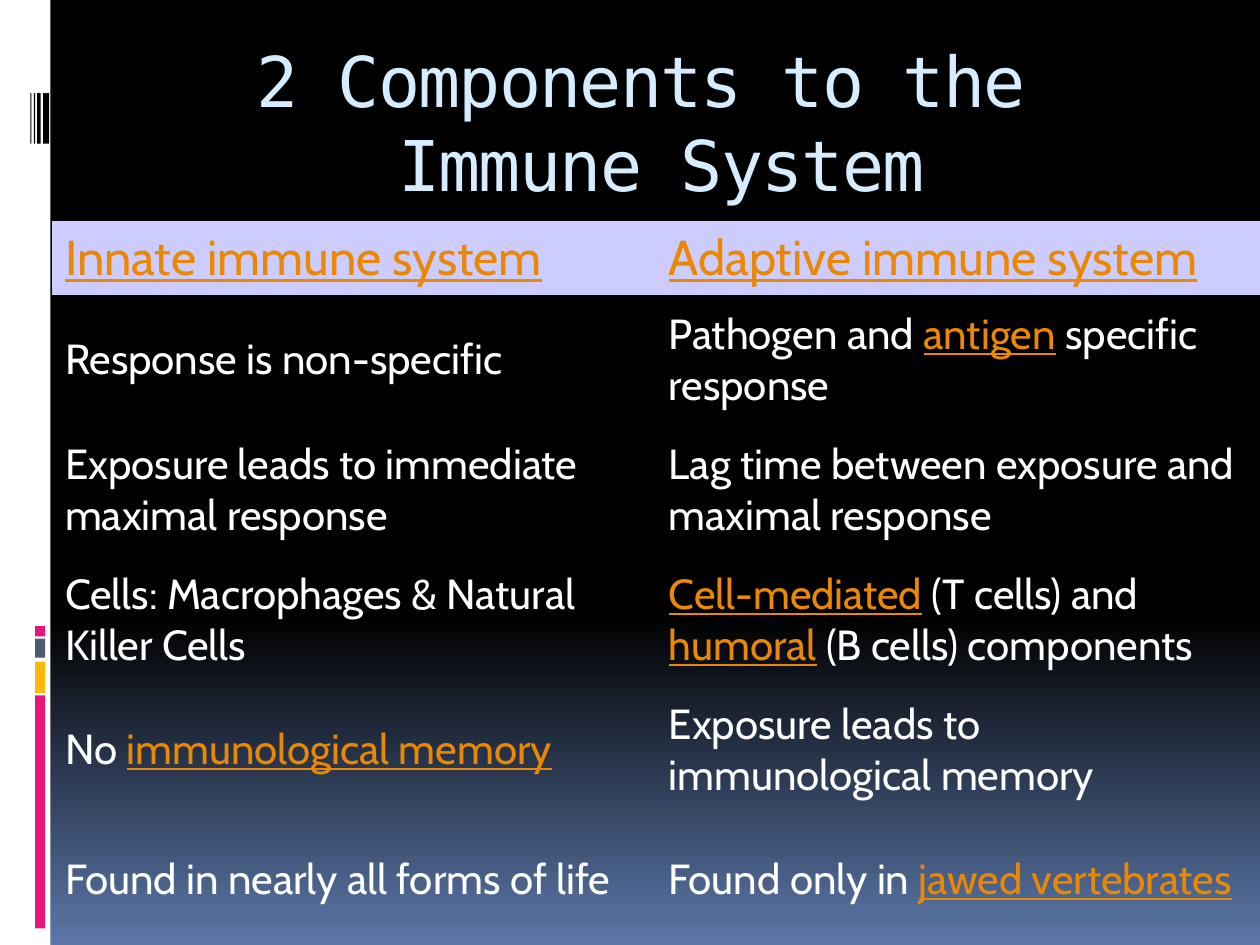
from pptx import Presentation
from pptx.dml.color import RGBColor
from pptx.enum.shapes import MSO_SHAPE as Shape
from pptx.enum.text import MSO_ANCHOR as Anchor, MSO_AUTO_SIZE as AutoSize, PP_ALIGN as Align
from pptx.util import Pt

BLACK = RGBColor(0x00, 0x00, 0x00)
WHITE = RGBColor(0xFF, 0xFF, 0xFF)
BLUE = RGBColor(0x5B, 0x77, 0xA8)
PINK = RGBColor(0xEA, 0x15, 0x7A)
YELLOW = RGBColor(0xFE, 0xB8, 0x0A)
SLATE = RGBColor(0x4E, 0x5B, 0x6F)
ICE = RGBColor(0xD6, 0xEC, 0xFF)
ORANGE = RGBColor(0xEB, 0x88, 0x03)
LAVENDER = RGBColor(0xCC, 0xCC, 0xFF)

PLAIN_STYLE = "{2D5ABB26-0587-4C30-8999-92F81FD0307C}"
HEADER_HEIGHT = 42.5

# Terms between asterisks are highlighted.
ROWS = [
    ("*Innate immune system*", "*Adaptive immune system*"),
    ("Response is non-specific", "Pathogen and *antigen* specific response"),
    ("Exposure leads to immediate maximal response",
     "Lag time between exposure and maximal response"),
    ("Cells: Macrophages & Natural Killer Cells",
     "*Cell-mediated* (T cells) and *humoral* (B cells) components"),
    ("No *immunological memory*", "Exposure leads to immunological memory"),
    ("Found in nearly all forms of life", "Found only in *jawed vertebrates*"),
]


def paint_background(page):
    fill = page.background.fill
    fill.gradient()
    fill.gradient_angle = 270
    for stop, color, position in zip(fill.gradient_stops, (BLACK, BLUE), (0.65, 1)):
        stop.color.rgb = color
        stop.position = position


def add_bar(page, left, top, width, height, color):
    bar = page.shapes.add_shape(Shape.RECTANGLE, Pt(left), Pt(top), Pt(width), Pt(height))
    bar.shadow.inherit = False
    bar.fill.solid()
    bar.fill.fore_color.rgb = color
    bar.line.fill.background()


def add_side_strip(page, left, top, width, height):
    add_bar(page, left, top, width, height, WHITE)
    for offset, length, color in ((357.8, 5.8, PINK), (365, 10.8, SLATE),
                                  (378, 18, YELLOW), (397.4, 133.2, PINK)):
        add_bar(page, left + 20, top + offset, 5.8, length, color)
    for offset, thickness in ((17.3, 0.7), (19.4, 0.7), (21.2, 2), (24.6, 3.5)):
        add_bar(page, left + offset, top + 53.3, thickness, 28.8, BLACK)


def set_title(page, left, top, width, height):
    title = page.shapes.title
    title.left, title.top, title.width, title.height = map(Pt, (left, top, width, height))
    frame = title.text_frame
    frame.text = "2 Components to the \vImmune System"
    frame.auto_size = AutoSize.NONE
    frame.vertical_anchor = Anchor.TOP
    para = frame.paragraphs[0]
    para.alignment = Align.CENTER
    para.line_spacing = Pt(48)
    for span in para.runs:
        span.font.name = "DejaVu Sans Mono"
        span.font.size = Pt(40)
        span.font.color.rgb = ICE
        span._r.get_or_add_rPr().set("spc", "-100")


def fill_cell(cell, text, size):
    cell.vertical_anchor = Anchor.MIDDLE
    para = cell.text_frame.paragraphs[0]
    for index, piece in enumerate(text.split("*")):
        if piece:
            marked = index % 2 == 1
            span = para.add_run()
            span.text = piece
            span.font.name = "Cabin"
            span.font.size = Pt(size)
            span.font.underline = marked
            span.font.color.rgb = ORANGE if marked else WHITE


def add_comparison(page, left, top, width, height):
    frame = page.shapes.add_table(len(ROWS), 2, Pt(left), Pt(top), Pt(width), Pt(height))
    table = frame.table
    table._tbl.tblPr.find("{*}tableStyleId").text = PLAIN_STYLE
    table.first_row = table.horz_banding = False
    for column in table.columns:
        column.width = Pt(width / 2)
    body_height = (height - HEADER_HEIGHT) / (len(ROWS) - 1)
    for index, texts in enumerate(ROWS):
        header = index == 0
        table.rows[index].height = Pt(HEADER_HEIGHT if header else body_height)
        for cell, text in zip(table.rows[index].cells, texts):
            fill_cell(cell, text, 28 if header else 24)
            if header:
                cell.fill.solid()
                cell.fill.fore_color.rgb = LAVENDER
            else:
                cell.fill.background()


def main():
    deck = Presentation()
    deck.slide_width, deck.slide_height = Pt(720), Pt(540)
    page = deck.slides.add_slide(deck.slide_layouts[5])
    paint_background(page)
    add_side_strip(page, 0, 0, 28.8, 540)
    set_title(page, 72, 18, 612, 94.5)
    add_comparison(page, 30, 126, 690, 414)
    deck.save("out.pptx")


if __name__ == "__main__":
    main()
